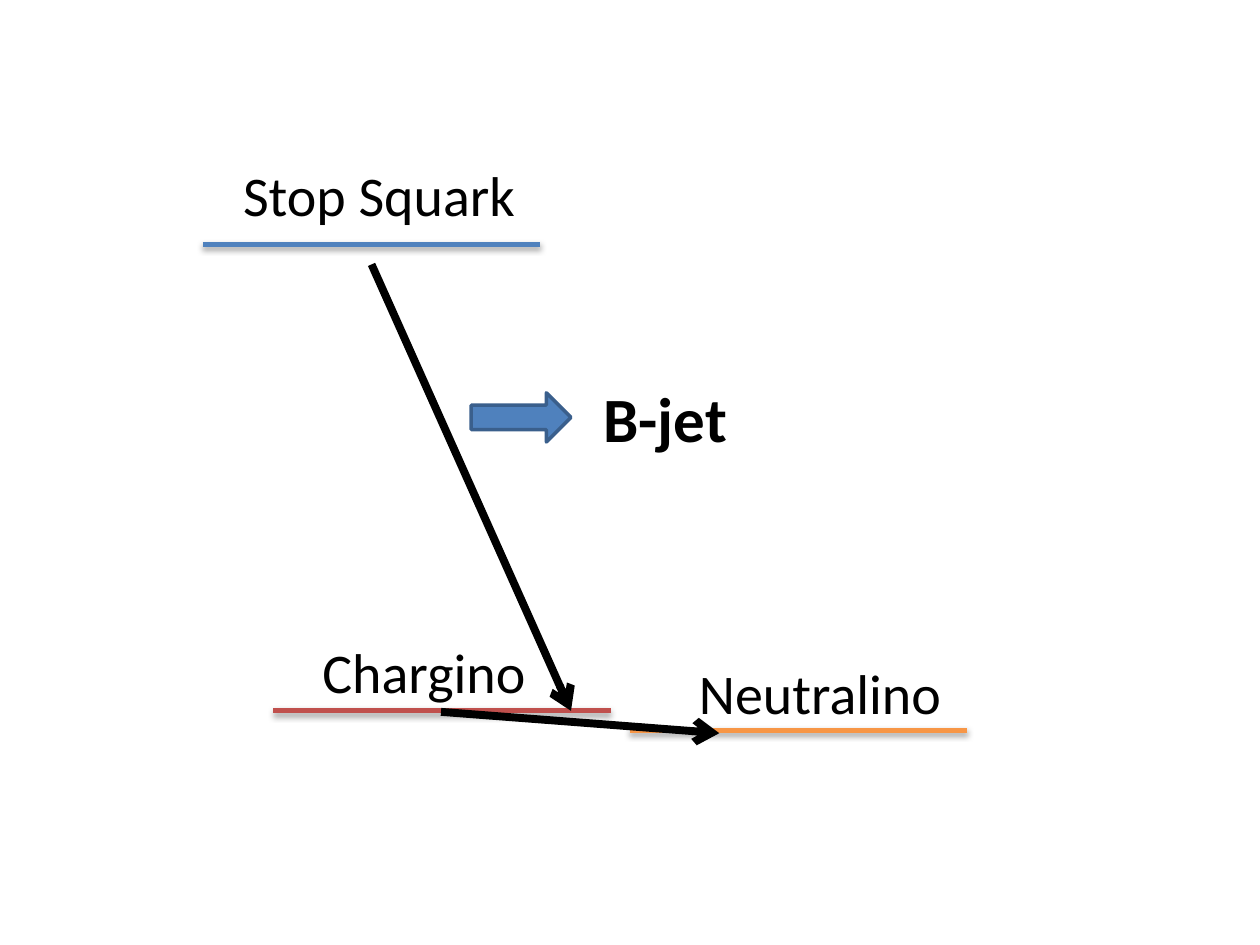
from lxml import etree
from pptx import Presentation
from pptx.dml.color import RGBColor
from pptx.enum.shapes import MSO_CONNECTOR, MSO_SHAPE
from pptx.enum.text import MSO_AUTO_SIZE
from pptx.oxml.ns import qn
from pptx.util import Cm, Pt

STRAIGHT = MSO_CONNECTOR.STRAIGHT
RIGHT_ARROW = MSO_SHAPE.RIGHT_ARROW
FIT_TEXT = MSO_AUTO_SIZE.SHAPE_TO_FIT_TEXT

COLORS = {
    "blue": "4F81BD",
    "red": "C0504D",
    "orange": "F79646",
    "outline": "3A5F8C",
    "black": "000000",
}

# Lengths are in centimetres.
LEVEL_LENGTH = 6.8
LEVELS = [  # left, top, colour
    (4.09, 4.93, "blue"),
    (5.51, 14.33, "red"),
    (12.7, 14.73, "orange"),
]
PARTICLE = {"name": "Calibri", "size": Pt(32)}
JET = {"name": "Calibri", "size": Pt(36), "bold": True}
LABELS = [  # wording, (left, top, width, height), font
    ("Stop Squark", (4.65, 3.12, 6.07, 1.63), PARTICLE),
    ("Chargino", (6.25, 12.73, 4.65, 1.63), PARTICLE),
    ("Neutralino", (13.84, 13.16, 5.44, 1.63), PARTICLE),
    ("B-jet", (11.91, 7.52, 3.02, 1.8), JET),
]
DECAYS = [  # start x, start y, end x, end y
    (7.49, 5.33, 11.51, 14.33),
    (8.89, 14.35, 14.5, 14.78),
]
EMISSION = (9.5, 7.92, 2.01, 0.99)


def rgb(name):
    return RGBColor.from_string(COLORS[name])


def add_line(slide, ends, color, width):
    """Draw a straight line and return it with its empty effect list."""
    line = slide.shapes.add_connector(STRAIGHT, *map(Cm, ends))
    line.line.color.rgb = rgb(color)
    line.line.width = Pt(width)
    effects = etree.SubElement(line._element.spPr, qn("a:effectLst"))
    return line, effects


def add_level(slide, left, top, color):
    """Draw an energy level with a soft shadow below it."""
    _, effects = add_line(slide, (left, top, left + LEVEL_LENGTH, top), color, 3)
    shadow = etree.SubElement(effects, qn("a:outerShdw"), blurRad="40000",
                              dist="23000", dir="5400000", rotWithShape="0")
    shade = etree.SubElement(shadow, qn("a:srgbClr"), val=COLORS["black"])
    etree.SubElement(shade, qn("a:alpha"), val="35000")


def add_decay(slide, ends):
    arrow, _ = add_line(slide, ends, "black", 4.5)
    outline = arrow.line._get_or_add_ln()
    etree.SubElement(outline, qn("a:tailEnd"), type="arrow")


def add_label(slide, wording, place, font):
    box = slide.shapes.add_textbox(*map(Cm, place))
    frame = box.text_frame
    frame.word_wrap = False
    frame.auto_size = FIT_TEXT
    span = frame.paragraphs[0].add_run()
    span.text = wording
    span.font.color.rgb = rgb("black")
    for attribute, value in font.items():
        setattr(span.font, attribute, value)


def add_emission(slide):
    block = slide.shapes.add_shape(RIGHT_ARROW, *map(Cm, EMISSION))
    block.shadow.inherit = False
    block.fill.solid()
    block.fill.fore_color.rgb = rgb("blue")
    block.line.color.rgb = rgb("outline")
    block.line.width = Pt(2)


def main():
    deck = Presentation()
    deck.slide_width, deck.slide_height = Cm(25.4), Cm(19.05)
    page = deck.slides.add_slide(deck.slide_layouts[6])
    for level in LEVELS:
        add_level(page, *level)
    for label in LABELS:
        add_label(page, *label)
    for ends in DECAYS:
        add_decay(page, ends)
    add_emission(page)
    deck.save("out.pptx")


if __name__ == "__main__":
    main()
